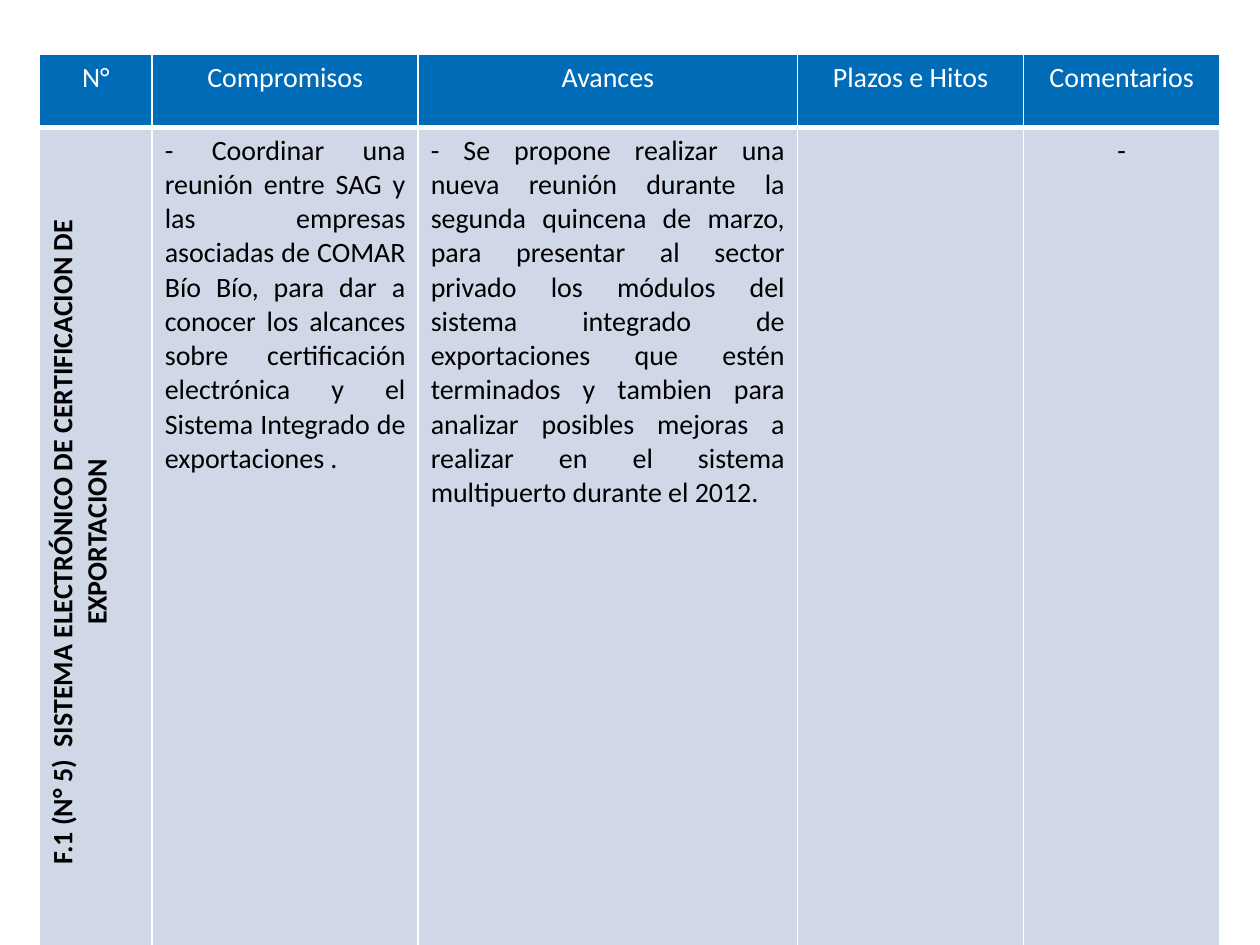
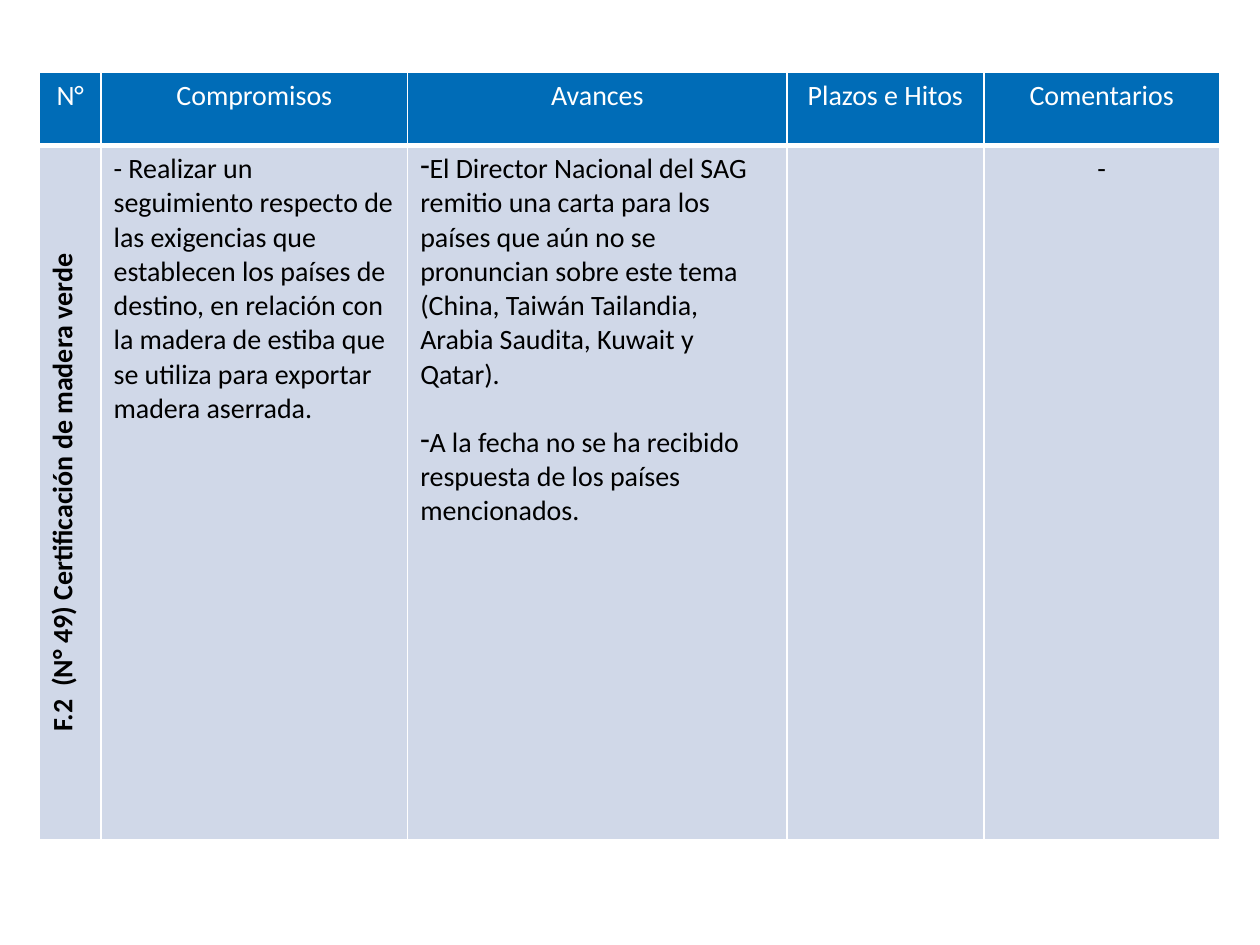
from dataclasses import dataclass

from lxml import etree
from pptx import Presentation
from pptx.dml.color import RGBColor
from pptx.enum.text import PP_ALIGN
from pptx.oxml.ns import qn
from pptx.util import Pt

LEFT, CENTER, JUSTIFY = PP_ALIGN.LEFT, PP_ALIGN.CENTER, PP_ALIGN.JUSTIFY


@dataclass(frozen=True)
class Theme:
    font: str = "Calibri"
    size: float = 16
    header_fill: str = "006CB7"
    header_text: str = "FFFFFF"
    body_fill: str = "D0D8E8"
    body_text: str = "000000"
    rule: str = "FFFFFF"
    thin: float = 1
    thick: float = 3


# Shared layout of the commitment tables
HEADINGS = ["N°", "Compromisos", "Avances", "Plazos e Hitos", "Comentarios"]
TABLE_LEFT = 22.5
HEADER_HEIGHT = 41.75
BULLET_HANG = 22.5
PARAGRAPH_GAP = 19.5

# One entry per slide
COMMITMENTS = [
    {
        "top": 31,
        "widths": [64.5, 152, 216.75, 129.25, 112],
        "body_height": 412.5,
        "align": JUSTIFY,
        "topic": "F.1 (N° 5)  SISTEMA ELECTRÓNICO DE CERTIFICACION DE EXPORTACION",
        "commitment": "- Coordinar una reunión entre SAG y las empresas asociadas de "
                      "COMAR Bío Bío, para dar a conocer los alcances sobre "
                      "certificación electrónica y el Sistema Integrado de "
                      "exportaciones .",
        "progress": ["- Se propone realizar una nueva reunión durante la segunda "
                     "quincena de marzo, para presentar al sector privado los módulos "
                     "del sistema integrado de exportaciones que estén terminados y "
                     "tambien para analizar posibles mejoras a realizar en el sistema "
                     "multipuerto durante el 2012."],
        "bulleted": False,
    },
    {
        "top": 41.5,
        "widths": [35.25, 175.25, 216.75, 112.5, 134.75],
        "body_height": 396.75,
        "align": LEFT,
        "topic": "F.2  (N° 49) Certificación de madera verde",
        "commitment": "- Realizar un seguimiento respecto de las exigencias que "
                      "establecen los países de destino, en relación con la madera de "
                      "estiba que se utiliza para exportar madera aserrada.",
        "progress": ["El Director Nacional del SAG remitio una carta para los países "
                     "que aún no se pronuncian sobre este tema (China, Taiwán "
                     "Tailandia, Arabia Saudita, Kuwait y Qatar).",
                     "A la fecha no se ha recibido respuesta de los países "
                     "mencionados."],
        "bulleted": True,
    },
]


class Deck:
    def __init__(self, theme):
        self.theme = theme
        self.presentation = Presentation()
        self.presentation.slide_width = Pt(720)
        self.presentation.slide_height = Pt(540)
        self.slide = None

    def add_slide(self):
        self.slide = self.presentation.slides.add_slide(
            self.presentation.slide_layouts[6])

    def add_grid(self, top, widths, heights):
        grid = self.slide.shapes.add_table(
            len(heights), len(widths), Pt(TABLE_LEFT), Pt(top),
            Pt(sum(widths)), Pt(sum(heights))).table
        for column, width in zip(grid.columns, widths):
            column.width = Pt(width)
        for row, height in zip(grid.rows, heights):
            row.height = Pt(height)
        return grid

    def set_borders(self, cell, bottom):
        properties = cell._tc.get_or_add_tcPr()
        thin = self.theme.thin
        for side, width in zip("LRTB", (thin, thin, thin, bottom)):
            line = etree.SubElement(properties, qn(f"a:ln{side}"), w=str(Pt(width)))
            fill = etree.SubElement(line, qn("a:solidFill"))
            etree.SubElement(fill, qn("a:srgbClr"), val=self.theme.rule)

    def fill_cell(self, cell, paragraphs, align, header=False, bold=False):
        theme = self.theme
        self.set_borders(cell, theme.thick if header else theme.thin)
        cell.fill.solid()
        cell.fill.fore_color.rgb = RGBColor.from_string(
            theme.header_fill if header else theme.body_fill)
        cell.text = "\n".join(paragraphs)
        for paragraph in cell.text_frame.paragraphs:
            paragraph.alignment = align
            font = paragraph.font
            font.name, font.size, font.bold = theme.font, Pt(theme.size), bold
            font.color.rgb = RGBColor.from_string(
                theme.header_text if header else theme.body_text)

    def add_dashes(self, cell):
        for index, paragraph in enumerate(cell.text_frame.paragraphs):
            if index:
                paragraph.space_before = Pt(PARAGRAPH_GAP)
            properties = paragraph._p.get_or_add_pPr()
            properties.set("marL", "0")
            properties.set("indent", str(-Pt(BULLET_HANG)))
            dash = etree.Element(qn("a:buChar"), char="-")
            properties.find(qn("a:defRPr")).addprevious(dash)

    def add_commitment(self, item):
        grid = self.add_grid(item["top"], item["widths"],
                             [HEADER_HEIGHT, item["body_height"]])
        # Header row
        for column, heading in enumerate(HEADINGS):
            self.fill_cell(grid.cell(0, column), [heading], CENTER, header=True)
        # Body row
        topic, commitment, progress, milestones, comments = grid.rows[1].cells
        self.fill_cell(topic, [item["topic"]], CENTER, bold=True)
        topic._tc.get_or_add_tcPr().set("vert", "vert270")
        self.fill_cell(commitment, [item["commitment"]], item["align"])
        self.fill_cell(progress, item["progress"], item["align"])
        if item["bulleted"]:
            self.add_dashes(progress)
        self.fill_cell(milestones, [""], LEFT)
        self.fill_cell(comments, ["-"], CENTER)


def main():
    deck = Deck(Theme())
    for item in COMMITMENTS:
        deck.add_slide()
        deck.add_commitment(item)
    deck.presentation.save("out.pptx")


if __name__ == "__main__":
    main()
